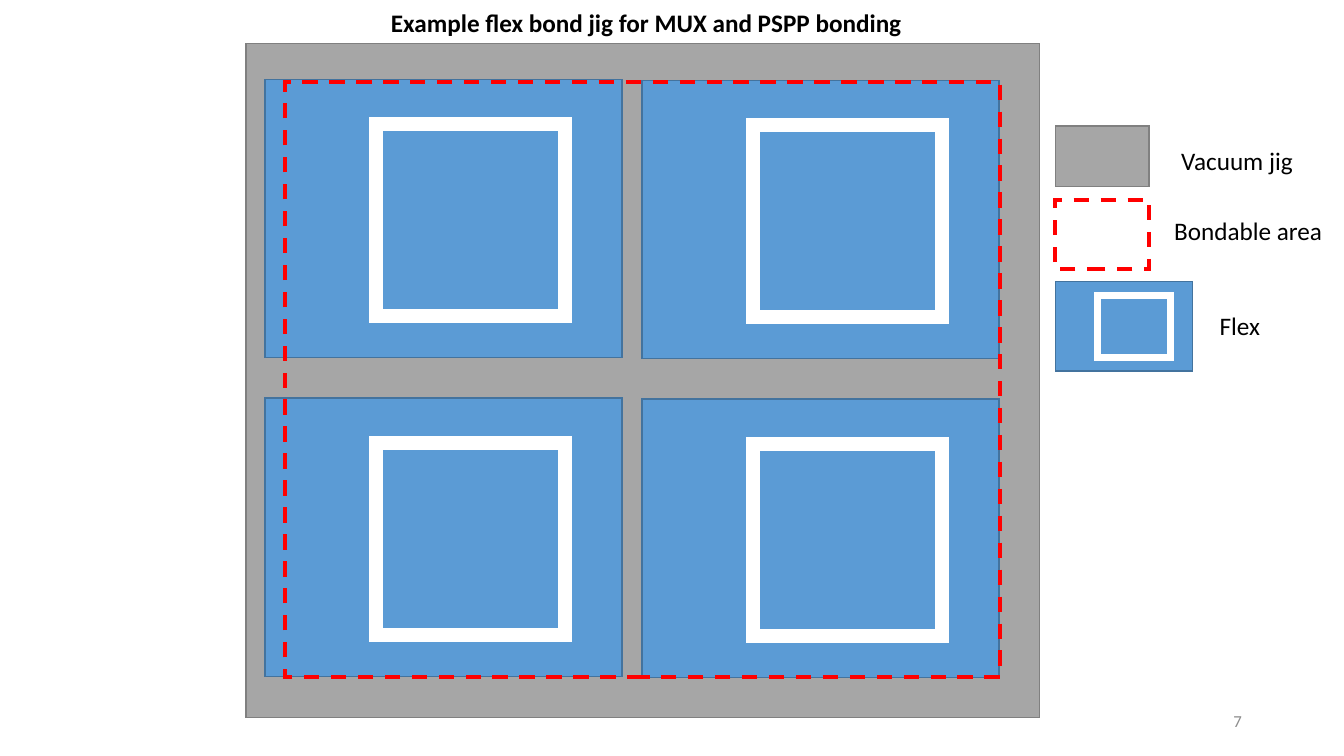
from itertools import product
from lxml.etree import SubElement as Sub
from pptx import Presentation
from pptx.dml.color import RGBColor as Rgb
from pptx.enum.dml import MSO_LINE as Dash
from pptx.enum.shapes import MSO_SHAPE as Kind
from pptx.enum.text import MSO_ANCHOR as Anchor, MSO_AUTO_SIZE as Fit, PP_ALIGN as Align
from pptx.oxml.ns import qn
from pptx.util import Inches, Pt

HUES = {"jig": "A6A6A6", "rim": "808080", "flex": "5B9BD5", "edge": "43739E",
        "bond": "FF0000", "chip": "FFFFFF", "ink": "000000", "page": "8C8C8C"}
CELL = Inches(0.1)
COLS, ROWS = 133.33, 75


def hue(name):
    return Rgb.from_string(HUES[name])


def grid(*cells):
    return [round(n * CELL) for n in cells]


def box(shapes, area, fill, line, width=1, dash=None):
    rect = shapes.add_shape(Kind.RECTANGLE, *grid(*area))
    rect.shadow.inherit = False
    if fill:
        rect.fill.solid()
        rect.fill.fore_color.rgb = hue(fill)
    else:
        rect.fill.background()
    rect.line.color.rgb = hue(line)
    rect.line.width = Pt(width)
    if dash:
        rect.line.dash_style = dash
    Sub(rect.line._get_or_add_ln(), qn("a:miter"), lim="800000")
    return rect


def bond(shapes, area):
    return box(shapes, area, None, "bond", 2.75, Dash.DASH)


def flex(shapes, area, width):
    left, top, wide, high = area
    group = shapes.add_group_shape().shapes
    box(group, area, "flex", "edge")
    chip = (left + 0.31 * wide, top + 0.16 * high, 0.53 * wide, 0.69 * high)
    box(group, chip, "flex", "chip", width)


def label(shapes, area, text, size=18, tint="ink", bold=False):
    frame = shapes.add_textbox(*grid(*area)).text_frame
    frame.word_wrap = False
    frame.auto_size = Fit.SHAPE_TO_FIT_TEXT
    frame.text = text
    font = frame.paragraphs[0].runs[0].font
    font.name, font.size, font.bold = "Calibri", Pt(size), bold
    font.color.rgb = hue(tint)
    return frame


def main():
    deck = Presentation()
    deck.slide_width, deck.slide_height = grid(COLS, ROWS)
    shapes = deck.slides.add_slide(deck.slide_layouts[6]).shapes

    box(shapes, (24.4, 4.3, 78.7, 66.9), "jig", "rim")
    for col, row in product(range(2), repeat=2):
        flex(shapes, (26.3 + 37.4 * col, 7.9 + 31.6 * row + 0.1 * col, 35.4, 27.6), 10)
    bond(shapes, (28.3, 8.1, 70.9, 59.1))

    key = 104.7
    box(shapes, (key, 12.5, 9.3, 6), "jig", "rim")
    bond(shapes, (key, 19.8, 9.3, 6.9))
    flex(shapes, (key, 27.9, 13.6, 8.9), 5)

    label(shapes, (116.2, 13.9, 13.2, 4), "Vacuum jig")
    label(shapes, (115.5, 20.9, 16.9, 4), "Bondable area")
    label(shapes, (120, 30.3, 7.8, 4), "Flex").word_wrap = True
    label(shapes, (37.8, 0.2, 53.2, 4),
          "Example flex bond jig for MUX and PSPP bonding", bold=True)
    page = label(shapes, (94.2, 69.5, 30, 4), "7", 12, "page")
    page.word_wrap = True
    page.auto_size = Fit.NONE
    page.vertical_anchor = Anchor.MIDDLE
    page.paragraphs[0].alignment = Align.RIGHT

    deck.save("out.pptx")


if __name__ == "__main__":
    main()
